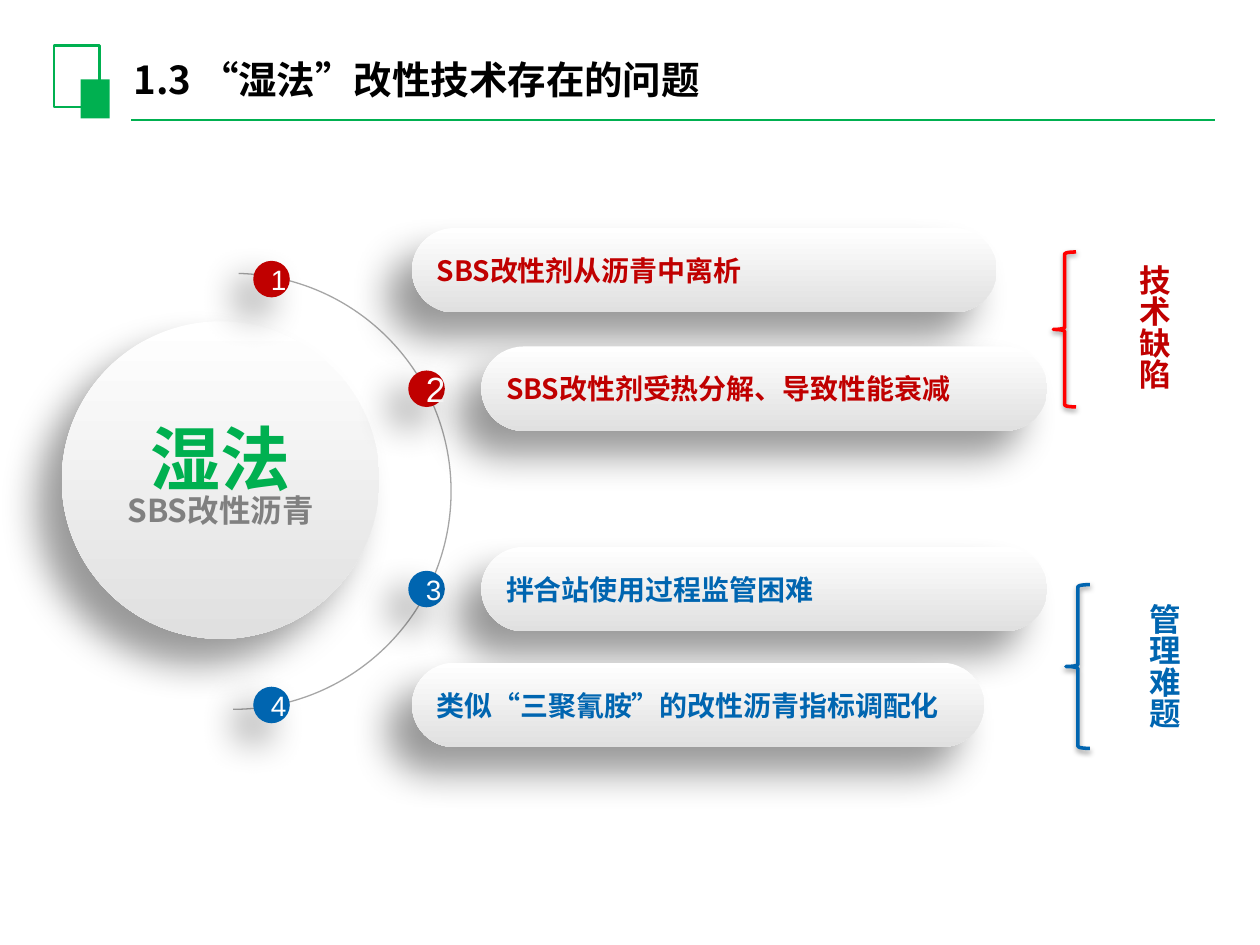
from lxml.etree import SubElement
from pptx import Presentation
from pptx.dml.color import RGBColor
from pptx.enum.shapes import MSO_CONNECTOR, MSO_SHAPE
from pptx.enum.text import MSO_ANCHOR, PP_ALIGN
from pptx.oxml.ns import qn
from pptx.util import Inches, Pt

CJK = "Noto Sans CJK SC"
GREEN, RED, BLUE = "00B050", "C00000", "0065B0"
SOFT = dict(alpha=40, blur=22, angle=135)
BADGE, BAR_H = 0.29, 0.67


def rgb(value):
    return RGBColor.from_string(value)


def add_run(p, text, size, color, font=CJK, bold=True):
    r = p.add_run()
    r.text = text
    r.font.size, r.font.bold, r.font.name = Pt(size), bold, font
    r.font.color.rgb = rgb(color)
    rPr = r.font._element
    rPr.set("lang", "zh-CN")
    SubElement(rPr, qn("a:ea")).set("typeface", CJK)


def set_shadow(sp, alpha, blur, dist, angle):
    effects = sp._element.spPr.find(qn("a:effectLst"))
    outer = SubElement(effects, qn("a:outerShdw"), blurRad=str(Pt(blur)),
                       dist=str(Pt(dist)), dir=str(angle * 60000),
                       algn="ctr", rotWithShape="0")
    color = SubElement(outer, qn("a:srgbClr"), val="000000")
    SubElement(color, qn("a:alpha"), val=str(alpha * 1000))


def add_shape(slide, kind, box, fill=None, line=None, width=1):
    """Add a preset shape; a pair of colours as fill makes a vertical gradient."""
    sp = slide.shapes.add_shape(kind, *map(Inches, box))
    sp.shadow.inherit = False
    if isinstance(fill, tuple):
        sp.fill.gradient()
        sp.fill.gradient_angle = 270
        for stop, color, pos in zip(sp.fill.gradient_stops, fill, (0, 1)):
            stop.color.rgb, stop.position = rgb(color), pos
    elif fill:
        sp.fill.solid()
        sp.fill.fore_color.rgb = rgb(fill)
    else:
        sp.fill.background()
    if line:
        sp.line.color.rgb, sp.line.width = rgb(line), Pt(width)
    else:
        sp.line.fill.background()
    sp.text_frame.vertical_anchor = MSO_ANCHOR.MIDDLE
    return sp


def add_raised(slide, kind, box):
    sp = add_shape(slide, kind, box, ("FFFFFF", "E0E0E0"))
    set_shadow(sp, dist=20, **SOFT)
    return sp


def add_header(slide, text):
    rule = slide.shapes.add_connector(MSO_CONNECTOR.STRAIGHT, *map(Inches, (1.04, 0.95, 9.64, 0.95)))
    rule.line.color.rgb, rule.line.width = rgb(GREEN), Pt(1.25)
    SubElement(rule._element.spPr, qn("a:effectLst"))
    add_shape(slide, MSO_SHAPE.RECTANGLE, (0.43, 0.36, 0.36, 0.49), line=GREEN, width=1.5)
    add_shape(slide, MSO_SHAPE.RECTANGLE, (0.64, 0.63, 0.23, 0.31), GREEN)

    title = slide.shapes.title
    title.left, title.top, title.width, title.height = map(Inches, (0.99, 0.39, 6.45, 0.48))
    tf = title.text_frame
    tf.margin_left = tf.margin_right = Inches(0.07)
    tf.margin_top = tf.margin_bottom = Inches(0.04)
    tf.vertical_anchor = MSO_ANCHOR.MIDDLE
    p = tf.paragraphs[0]
    p.alignment = PP_ALIGN.LEFT
    add_run(p, text, 22, "000000")


def add_hub(slide):
    """Add the large disc and the arc that carries the numbers."""
    tf = add_raised(slide, MSO_SHAPE.OVAL, (0.49, 2.55, 2.52, 2.52)).text_frame
    lines = (("湿法", 40, GREEN), ("SBS改性沥青", 18, "808080"))
    for i, line in enumerate(lines):
        p = tf.add_paragraph() if i else tf.paragraphs[0]
        p.alignment = PP_ALIGN.CENTER
        p.line_spacing = 0.8
        add_run(p, *line)
    arc = add_shape(slide, MSO_SHAPE.ARC, (0.12, 2.17, 3.46, 3.46), line="A6A6A6", width=0.75)
    arc.adjustments[0], arc.adjustments[1] = 108.857, 0
    arc.rotation = 90


def add_badge(slide, number, left, top, color, size):
    sp = add_shape(slide, MSO_SHAPE.OVAL, (left, top, BADGE, BADGE), color)
    set_shadow(sp, dist=15, **SOFT)
    p = sp.text_frame.paragraphs[0]
    p.alignment = PP_ALIGN.CENTER
    add_run(p, str(number), size, "FFFFFF", "Arial", False)


def add_bar(slide, text, left, top, width, color, font):
    sp = add_raised(slide, MSO_SHAPE.ROUNDED_RECTANGLE, (left, top, width, BAR_H))
    sp.adjustments[0] = 0.5
    p = sp.text_frame.paragraphs[0]
    p.alignment = PP_ALIGN.LEFT
    add_run(p, text, 16, color, font)


def add_group_label(slide, text, left, top, color):
    box = slide.shapes.add_textbox(*map(Inches, (left, top, 0.5, 1.11)))
    tf = box.text_frame
    tf.word_wrap = False
    tf._txBody.bodyPr.set("vert", "eaVert")
    add_run(tf.paragraphs[0], text, 18, color, "Arial")


def add_brace(slide, box, color):
    sp = add_shape(slide, MSO_SHAPE.LEFT_BRACE, box, line=color, width=2)
    set_shadow(sp, alpha=38, blur=3.1, dist=1.6, angle=90)


def main():
    prs = Presentation()
    prs.slide_width, prs.slide_height = Inches(10), Inches(7.5)
    slide = prs.slides.add_slide(prs.slide_layouts[5])
    add_header(slide, "1.3 “湿法”改性技术存在的问题")
    add_hub(slide)

    outer, inner = (2.01, 3.27), (3.24, 3.82)
    problems = (
        ("SBS改性剂从沥青中离析", outer, 2.07, 1.81, 4.64, RED, CJK, 16),
        ("SBS改性剂受热分解、导致性能衰减", inner, 2.94, 2.75, 4.49, RED, CJK, 20),
        ("拌合站使用过程监管困难", inner, 4.53, 4.34, 4.49, BLUE, "Arial", 16),
        ("类似“三聚氰胺”的改性沥青指标调配化", outer, 5.45, 5.26, 4.54, BLUE, "Arial", 16),
    )
    for number, (text, lefts, badge_top, bar_top, width, color, font, size) in enumerate(problems, 1):
        add_badge(slide, number, lefts[0], badge_top, color, size)
        add_bar(slide, text, lefts[1], bar_top, width, color, font)

    add_group_label(slide, "技术缺陷", 8.86, 2, RED)
    add_group_label(slide, "管理难题", 8.94, 4.69, BLUE)
    add_brace(slide, (8.36, 2, 0.18, 1.23), "FF0000")
    add_brace(slide, (8.46, 4.64, 0.19, 1.3), BLUE)
    prs.save("out.pptx")


if __name__ == "__main__":
    main()
